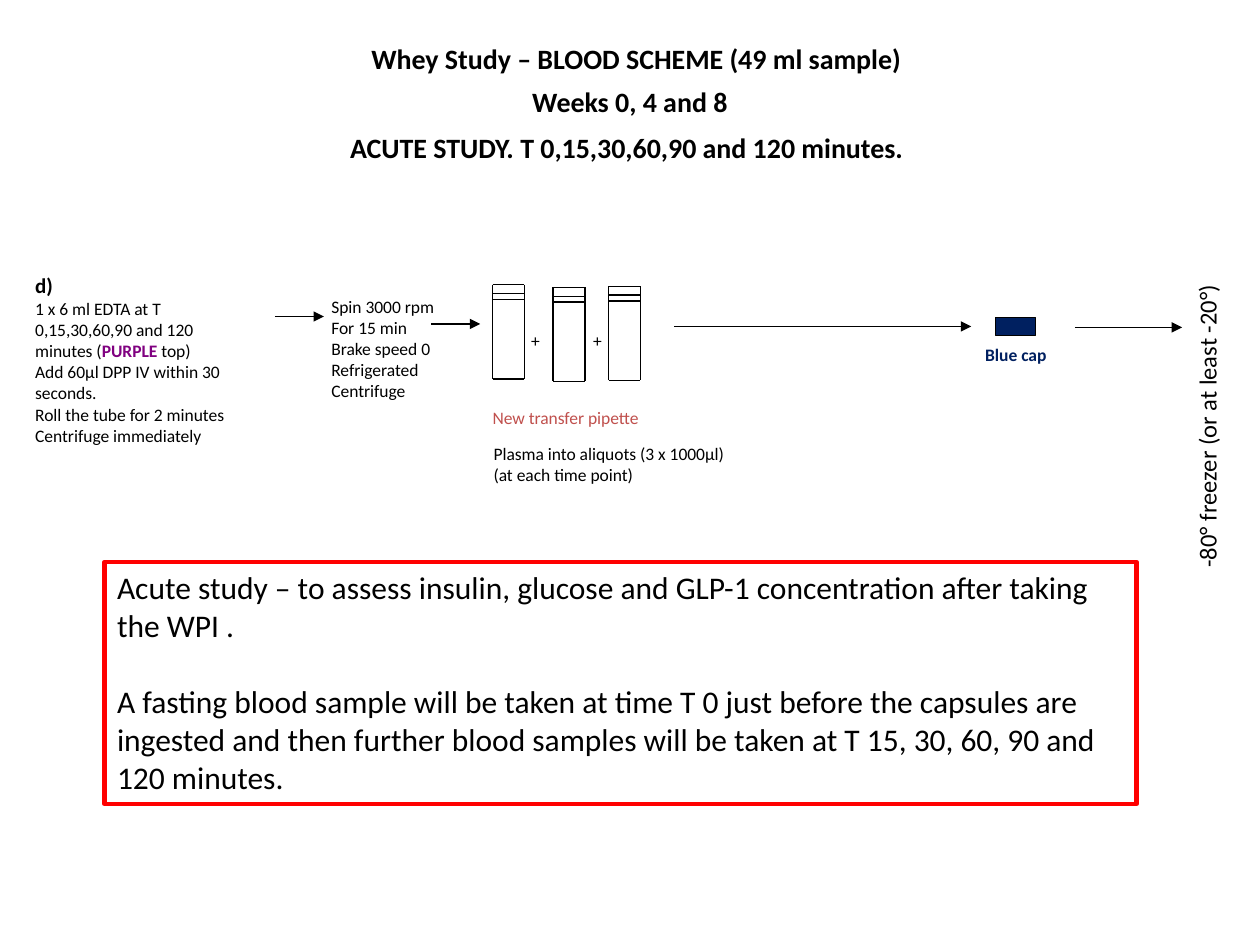
from dataclasses import dataclass

from lxml import etree
from pptx import Presentation
from pptx import util as u
from pptx.dml.color import RGBColor
from pptx.enum import shapes, text
from pptx.oxml.ns import qn


@dataclass(frozen=True)
class Theme:
    font: str = "Calibri"
    black: str = "000000"
    purple: str = "800080"
    coral: str = "C0504D"
    navy: str = "002060"
    red: str = "FF0000"
    small: int = 10
    label: int = 12
    freezer: int = 14
    title: int = 16
    summary: int = 18
    thin: float = 0.75
    frame: float = 2.5


T = Theme()

# All places are in centimetres: left, top, width, height.
TITLES = [
    ((3.66, 0.71, 18.34, 0.94), "Whey Study – BLOOD SCHEME (49 ml sample)"),
    ((3.53, 1.57, 18.34, 0.94), "Weeks 0, 4 and 8"),
    ((3.53, 2.51, 18.34, 0.94), "ACUTE STUDY. T 0,15,30,60,90 and 120 minutes. "),
]

# A paragraph is a list of runs: (text, colour, bold).
SAMPLE = [
    [("1 x 6 ml EDTA at T 0,15,30,60,90 and 120 minutes (", T.black, False),
     ("PURPLE ", T.purple, True),
     ("top)", T.black, False)],
    "Add 60µl DPP IV within 30 seconds.",
    "Roll the tube for 2 minutes",
    "Centrifuge immediately",
]
SPIN = ["Spin 3000 rpm", "For 15 min", "Brake speed 0", "Refrigerated Centrifuge"]
ALIQUOTS = ["Plasma into aliquots (3 x 1000µl)", "(at each time point)"]

# (place, paragraphs, options)
LABELS = [
    ((0.46, 5.89, 4.9, 3.25), SAMPLE, {}),
    ((0.46, 5.36, 0.89, 0.76), ["d)"], dict(size=T.label, bold=True, wrap=False)),
    ((6.43, 5.84, 2.64, 2.39), SPIN, {}),
    ((10.46, 6.53, 0.69, 0.69), ["+"], dict(wrap=False)),
    ((11.71, 6.53, 0.69, 0.69), ["+"], dict(wrap=False)),
    ((9.68, 8.08, 3.53, 0.69), ["New transfer pipette"], dict(color=T.coral, wrap=False)),
    ((9.7, 8.81, 5.21, 1.12), ALIQUOTS, dict(wrap=False)),
    ((19.61, 6.81, 1.75, 0.69), ["Blue cap"], dict(color=T.navy, bold=True, wrap=False)),
]

FREEZER = ((21.18, 8.1, 6.32, 0.86), ["-80° freezer (or at least -20°)"])
SUMMARY = ((2.11, 11.33, 20.8, 4.88), [
    "Acute study – to assess insulin, glucose and GLP-1 concentration after taking the WPI .",
    "A fasting blood sample will be taken at time T 0 just before the capsules are ingested "
    "and then further blood samples will be taken at T 15, 30, 60, 90 and 120 minutes.",
])
SUMMARY_GAP = 22  # points, one line of the summary text

ARROWS = [(8.69, 9.68, 6.53), (5.54, 6.53, 6.38),
          (13.59, 19.58, 6.58), (21.67, 23.83, 6.6)]  # start x, end x, y
TUBES = [(9.93, 5.74), (11.15, 5.79), (12.27, 5.77)]  # left, top
TUBE_W, TUBE_H = 0.64, 1.9
TUBE_RULES = [TUBE_H, 0, 0.18, 0.3]  # offsets of the horizontal lines from the top
CAP = (20.07, 6.4, 0.81, 0.36)


def rgb(color):
    return RGBColor.from_string(color)


def cm(values):
    return [u.Cm(v) for v in values]


def write(sp, paragraphs, size=T.small, color=T.black, bold=False, wrap=True,
          align=text.PP_ALIGN.LEFT, gap=0):
    """Fill a shape with paragraphs, setting gap points between them."""
    tf = sp.text_frame
    tf.word_wrap = wrap
    tf.vertical_anchor = text.MSO_ANCHOR.TOP
    for i, runs in enumerate(paragraphs):
        p = tf.add_paragraph() if i else tf.paragraphs[0]
        p.alignment = align
        if i and gap:
            p.space_before = u.Pt(gap)
        if isinstance(runs, str):
            runs = [(runs, color, bold)]
        for words, run_color, run_bold in runs:
            r = p.add_run()
            r.text = words
            r.font.name = T.font
            r.font.size = u.Pt(size)
            r.font.bold = run_bold
            r.font.color.rgb = rgb(run_color)


def add_label(s, place, paragraphs, **options):
    sp = s.shapes.add_textbox(*cm(place))
    write(sp, paragraphs, **options)
    return sp


def add_rect(s, place, line, width, fill=None):
    sp = s.shapes.add_shape(shapes.MSO_SHAPE.RECTANGLE, *cm(place))
    sp.shadow.inherit = False
    if fill:
        sp.fill.solid()
        sp.fill.fore_color.rgb = rgb(fill)
    else:
        sp.fill.background()
    sp.line.color.rgb = rgb(line)
    sp.line.width = u.Pt(width)
    return sp


def add_line(parent, x1, y1, x2, y2, arrow=False):
    ln = parent.shapes.add_connector(shapes.MSO_CONNECTOR.STRAIGHT, *cm((x1, y1, x2, y2)))
    ln.line.color.rgb = rgb(T.black)
    ln.line.width = u.Pt(T.thin)
    sp_pr = ln.line._get_or_add_ln().getparent()
    if arrow:
        etree.SubElement(sp_pr.find(qn("a:ln")), qn("a:tailEnd"), type="triangle")
    etree.SubElement(sp_pr, qn("a:effectLst"))


def add_tube(s, x, y):
    group = s.shapes.add_group_shape()
    for side in (x, x + TUBE_W):
        add_line(group, side, y, side, y + TUBE_H)
    for offset in TUBE_RULES:
        add_line(group, x, y + offset, x + TUBE_W, y + offset)


def main():
    prs = Presentation()
    prs.slide_width, prs.slide_height = cm((25.4, 19.05))
    s = prs.slides.add_slide(prs.slide_layouts[6])

    for place, title in TITLES:
        add_label(s, place, [title], size=T.title, bold=True, align=text.PP_ALIGN.CENTER)
    for place, paragraphs, options in LABELS:
        add_label(s, place, paragraphs, **options)
    add_label(s, *FREEZER, size=T.freezer, wrap=False).rotation = 270

    for x1, x2, y in ARROWS:
        add_line(s, x1, y, x2, y, arrow=True)
    for x, y in TUBES:
        add_tube(s, x, y)
    add_rect(s, CAP, T.black, T.thin, fill=T.navy)

    place, paragraphs = SUMMARY
    write(add_rect(s, place, T.red, T.frame), paragraphs, size=T.summary, gap=SUMMARY_GAP)

    prs.save("out.pptx")


if __name__ == "__main__":
    main()
